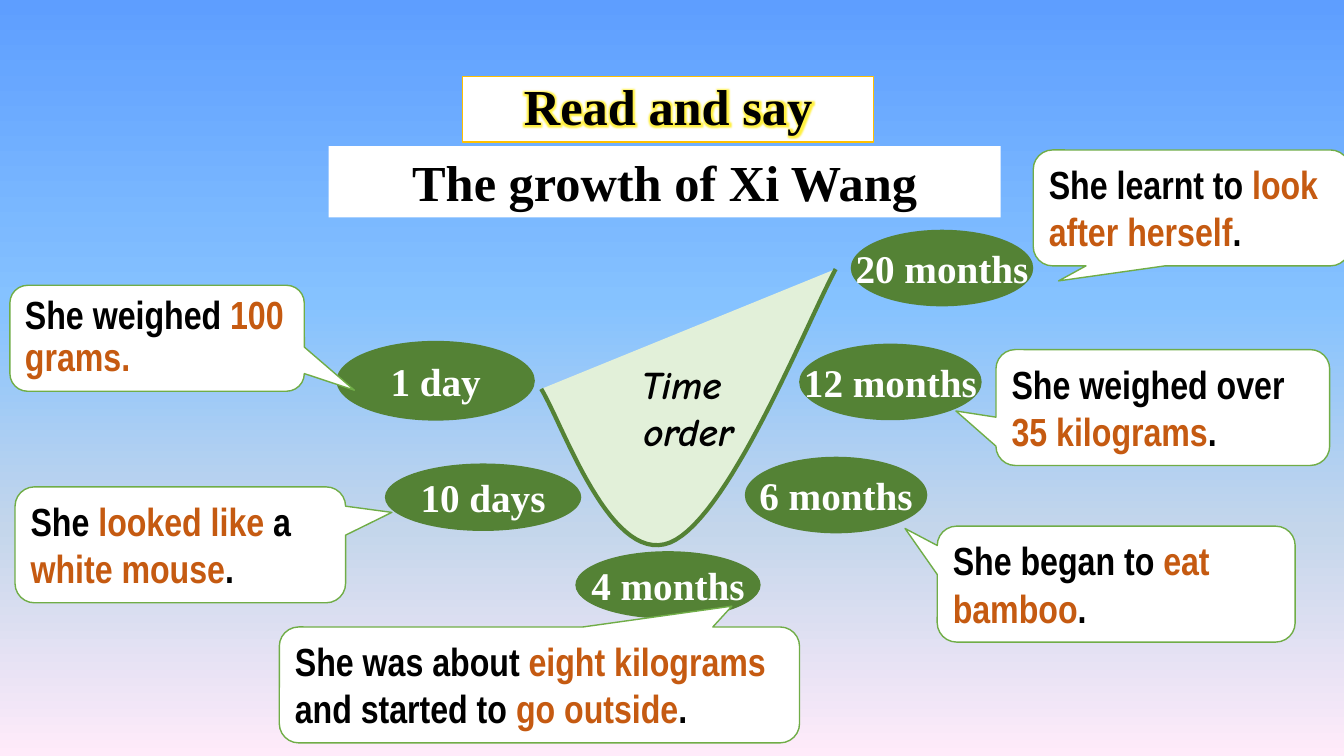
from copy import deepcopy
from dataclasses import dataclass

from lxml import etree
from pptx import Presentation
from pptx.dml.color import RGBColor
from pptx.enum.shapes import MSO_SHAPE
from pptx.enum.text import MSO_ANCHOR, MSO_AUTO_SIZE, PP_ALIGN
from pptx.oxml.ns import qn
from pptx.util import Cm, Pt

RECTANGLE, OVAL = MSO_SHAPE.RECTANGLE, MSO_SHAPE.OVAL
CALLOUT = MSO_SHAPE.ROUNDED_RECTANGULAR_CALLOUT
LEFT, CENTER = PP_ALIGN.LEFT, PP_ALIGN.CENTER
TOP, MIDDLE = MSO_ANCHOR.TOP, MSO_ANCHOR.MIDDLE
NO_AUTO_SIZE = MSO_AUTO_SIZE.NONE

BLACK = RGBColor(0x00, 0x00, 0x00)
WHITE = RGBColor(0xFF, 0xFF, 0xFF)
GOLD = RGBColor(0xFF, 0xC0, 0x00)
DARK_GREEN = RGBColor(0x54, 0x82, 0x35)
GREEN = RGBColor(0x70, 0xAD, 0x47)
PALE_GREEN = RGBColor(0xE2, 0xF0, 0xD9)
ORANGE = RGBColor(0xC5, 0x5A, 0x11)
GLOW_YELLOW = RGBColor(0xFF, 0xF0, 0x40)
SKY_STOPS = [
    (0, RGBColor(0x5E, 0x9E, 0xFF)),
    (0.4, RGBColor(0x85, 0xC2, 0xFF)),
    (0.7, RGBColor(0xC4, 0xD6, 0xEB)),
    (1, RGBColor(0xFF, 0xEB, 0xFA)),
]

SERIF, NARROW, COMIC = "Times New Roman", "Arial Narrow", "Comic Neue"


@dataclass(frozen=True)
class Box:
    """Left, top, width and height in centimetres."""
    left: float
    top: float
    width: float
    height: float

    def lengths(self):
        return Cm(self.left), Cm(self.top), Cm(self.width), Cm(self.height)


@dataclass(frozen=True)
class Stage:
    """An age in its oval and a callout; asterisks enclose highlighted words."""
    age: str
    oval: Box
    fact: str
    callout: Box
    pointer: tuple[float, float]
    line_spacing: float = 1.0


STAGES = [
    Stage("1 day", Box(8.48, 8.59, 5, 2.01), "She weighed *100 grams.*",
          Box(0.25, 7.19, 7.42, 2.67), (0.67, 0.49), 0.9),
    Stage("10 days", Box(9.7, 11.68, 4.95, 1.7),
          "She *looked like *a *white mouse*.",
          Box(0.38, 12.27, 8.33, 2.92), (0.64, -0.28)),
    Stage("4 months", Box(14.5, 13.89, 4.67, 1.7),
          "She was about *eight kilograms *and started to *go outside*.",
          Box(7.04, 15.8, 13.11, 2.92), (0.37, -0.68)),
    Stage("6 months", Box(18.77, 11.51, 4.6, 1.93),
          "She began to *eat bamboo*.",
          Box(23.62, 13.26, 9.02, 2.92), (-0.59, -0.48)),
    Stage("12 months", Box(20.14, 8.66, 4.6, 1.93),
          "She weighed over *35 kilograms*.",
          Box(25.1, 8.81, 8.41, 2.92), (-0.62, 0.03)),
    Stage("20 months", Box(21.44, 5.79, 4.6, 1.93),
          "She learnt to *look after herself*.",
          Box(26.04, 3.78, 7.98, 2.92), (-0.42, 0.63)),
]

TIME_CURVES = [
    [(13.64, 9.8), (14.2, 10.72), (15.39, 14.27), (16.89, 13.67)],
    [(16.89, 13.67), (18.36, 13.06), (20.29, 8.23), (21.06, 6.78)],
]
CURVE_STEPS = 30


def paint_background(slide) -> None:
    fill = slide.background.fill
    fill.gradient()
    fill.gradient_angle = 270
    stop_list = slide.element.find(".//" + qn("a:gsLst"))
    while len(stop_list) < len(SKY_STOPS):
        stop_list.append(deepcopy(stop_list[0]))
    for stop, (position, color) in zip(fill.gradient_stops, SKY_STOPS):
        stop.position = position
        stop.color.rgb = color


def style_shape(shape, fill: RGBColor, line: RGBColor | None = None,
                line_width: float = 1) -> None:
    shape.fill.solid()
    shape.fill.fore_color.rgb = fill
    if line is None:
        shape.line.fill.background()
    else:
        shape.line.color.rgb = line
        shape.line.width = Pt(line_width)


def write_text(shape, text: str, *, font: str, size: float = 28,
               color: RGBColor = BLACK, italic: bool = False, align=CENTER,
               anchor=MIDDLE, line_spacing: float = 1.0,
               wrap: bool = True) -> None:
    """Fill the shape with text, colouring the words between asterisks."""
    frame = shape.text_frame
    frame.auto_size = NO_AUTO_SIZE
    frame.word_wrap = wrap
    frame.vertical_anchor = anchor
    for index, line in enumerate(text.split("\n")):
        paragraph = frame.add_paragraph() if index else frame.paragraphs[0]
        paragraph.alignment = align
        paragraph.line_spacing = line_spacing
        for part_index, part in enumerate(line.split("*")):
            if not part:
                continue
            run = paragraph.add_run()
            run.text = part
            run.font.name = font
            run.font.size = Pt(size)
            run.font.bold = True
            run.font.italic = italic
            run.font.color.rgb = ORANGE if part_index % 2 else color


def add_glow(shape, color: RGBColor, radius: float) -> None:
    """Put a soft glow around the text of the shape."""
    for fill in shape.text_frame.paragraphs[0].runs[0].font.fill, :
        fill.solid()
        fill.fore_color.rgb = BLACK
    solid_fill = shape.element.find(".//" + qn("a:rPr")).find(qn("a:solidFill"))
    effects = etree.Element(qn("a:effectLst"))
    glow = etree.SubElement(effects, qn("a:glow"), rad=str(Pt(radius)))
    etree.SubElement(glow, qn("a:srgbClr"), val=str(color))
    solid_fill.addnext(effects)


def add_box(slide, kind, box: Box, fill: RGBColor,
            line: RGBColor | None = None):
    shape = slide.shapes.add_shape(kind, *box.lengths())
    shape.shadow.inherit = False
    style_shape(shape, fill, line)
    return shape


def curve_points(controls: list[tuple[float, float]]) -> list[tuple[int, int]]:
    """Points along a cubic Bézier curve, without its start."""
    points = []
    for step in range(1, CURVE_STEPS + 1):
        t = step / CURVE_STEPS
        weights = ((1 - t) ** 3, 3 * t * (1 - t) ** 2, 3 * t * t * (1 - t), t ** 3)
        x, y = (sum(w * c for w, c in zip(weights, axis))
                for axis in zip(*controls))
        points.append((Cm(x), Cm(y)))
    return points


def add_time_curve(slide) -> None:
    start_x, start_y = TIME_CURVES[0][0]
    builder = slide.shapes.build_freeform(Cm(start_x), Cm(start_y))
    for controls in TIME_CURVES:
        builder.add_line_segments(curve_points(controls), close=False)
    shape = builder.convert_to_shape()
    shape.shadow.inherit = False
    style_shape(shape, PALE_GREEN, DARK_GREEN, 3)
    write_text(shape, "Time \norder", font=COMIC, italic=True)


def add_stage(slide, stage: Stage) -> None:
    oval = add_box(slide, OVAL, stage.oval, DARK_GREEN)
    write_text(oval, stage.age, font=SERIF, color=WHITE, wrap=False)
    callout = add_box(slide, CALLOUT, stage.callout, WHITE, GREEN)
    for index, offset in enumerate(stage.pointer):
        callout.adjustments[index] = offset
    write_text(callout, stage.fact, font=NARROW, align=LEFT, anchor=TOP,
               line_spacing=stage.line_spacing)


def main() -> None:
    presentation = Presentation()
    presentation.slide_width, presentation.slide_height = Cm(33.87), Cm(19.05)
    slide = presentation.slides.add_slide(presentation.slide_layouts[5])
    paint_background(slide)

    title = slide.shapes.title
    title.left, title.top, title.width, title.height = Box(
        11.66, 1.93, 10.36, 1.65).lengths()
    style_shape(title, WHITE, GOLD)
    write_text(title, "Read and say", font=SERIF, size=36, line_spacing=0.9)
    add_glow(title, GLOW_YELLOW, 5)

    subtitle = add_box(slide, RECTANGLE, Box(8.28, 3.68, 16.94, 1.8), WHITE)
    write_text(subtitle, "The growth of Xi Wang", font=SERIF, size=36)

    add_time_curve(slide)
    for stage in STAGES:
        add_stage(slide, stage)
    presentation.save("out.pptx")


if __name__ == "__main__":
    main()
